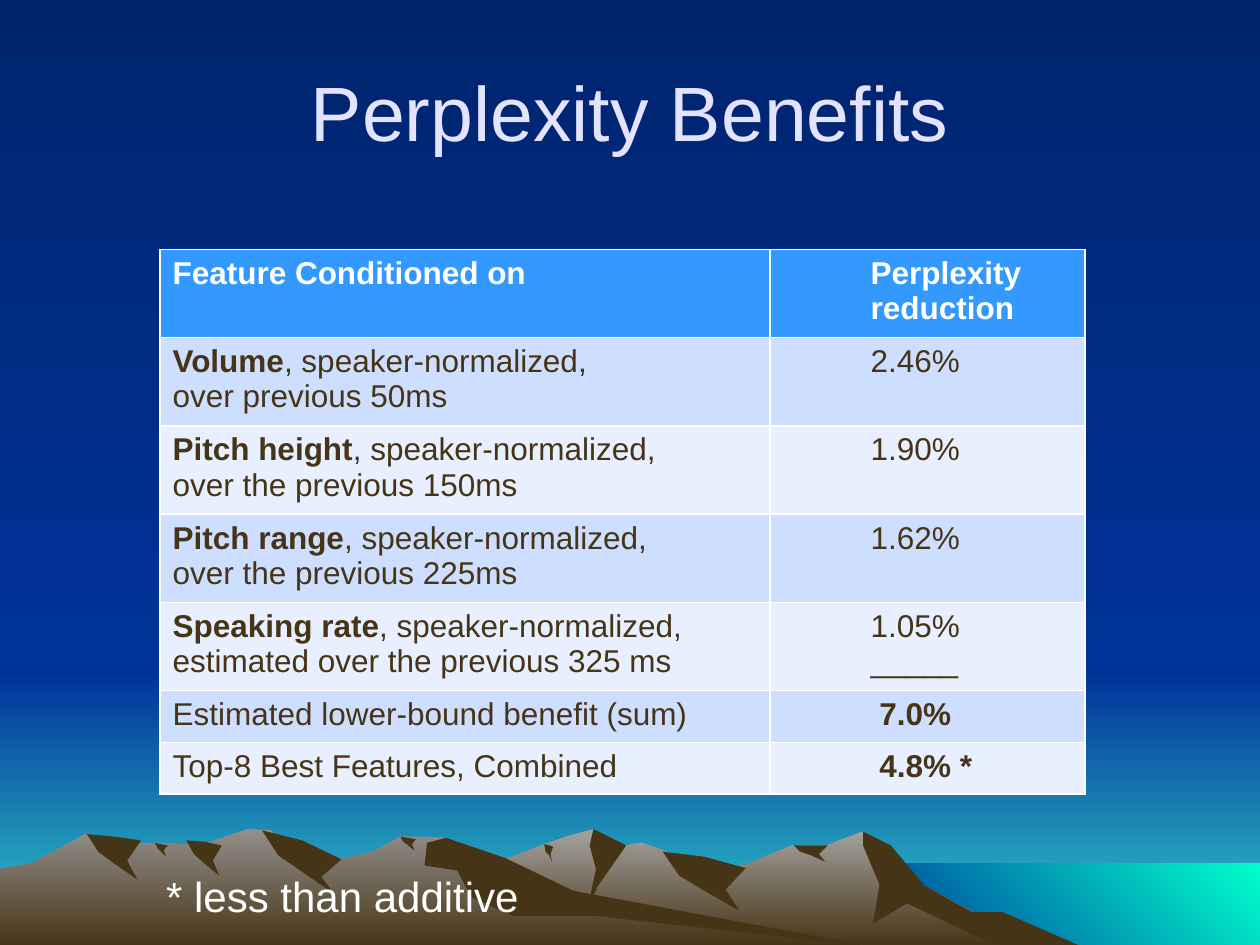
from dataclasses import dataclass

from pptx import Presentation
from pptx import util as u
from pptx.dml.color import RGBColor
from pptx.enum import shapes, text


@dataclass(frozen=True)
class Theme:
    font: str = "Arial"
    title_size: int = 44
    note_size: int = 24
    table_size: int = 18
    title: str = "E3E3FF"
    white: str = "FFFFFF"
    earth: str = "463416"
    header: str = "3399FF"
    bands: tuple = ("CEDEFF", "E8EFFF")
    sky: tuple = ("00246D", "003399")
    horizon: tuple = ("003399", "33CCCC")
    sea: tuple = ("003399", "00FFCC")
    far_hills: tuple = ("A5A29F", "463416")
    near_hills: tuple = ("938F8B", "463416")


@dataclass(frozen=True)
class Gully:
    left: float
    top: float
    width: float
    depth: float
    shoulder: float = 0.15

    def points(self):
        middle = (self.shoulder + 1) / 2
        profile = [(0, 0), (0.5, self.shoulder / 3), (1, self.shoulder),
                   (0.75, middle), (0.92, 1), (0.5, 0.65), (0.2, 0.4)]
        return [(self.left + x * self.width, self.top + y * self.depth)
                for x, y in profile]


SLIDE_WIDTH, SLIDE_HEIGHT = 10, 7.5
HORIZON_TOP = 5.33
SEA_LEFT, SEA_TOP = 6.83, 6.85
HILL_FOOT = 7.51

FAR_CREST = [(3.27, 7.09), (3.94, 6.85), (4.3, 6.71), (4.5, 6.64), (4.71, 6.58),
             (4.86, 6.73), (5.09, 6.69), (5.29, 6.76), (5.36, 6.9), (5.66, 6.97),
             (6.29, 6.71), (6.56, 6.71), (6.85, 6.6), (7.02, 6.71), (7.23, 6.98),
             (7.78, 7.27)]
NEAR_CREST = [(0, 6.9), (0.26, 6.85), (0.68, 6.62), (0.94, 6.71), (1.23, 6.69),
              (1.6, 6.71), (1.96, 6.58), (2.15, 6.59), (2.36, 6.81), (2.71, 6.82),
              (2.96, 6.76), (3.18, 6.64), (3.54, 6.65), (4.32, 7.12)]

EAST_FLANK = [(6.85, 6.6), (7.07, 6.71), (7.34, 7.03), (7.71, 7.24), (7.96, 7.24),
              (8.58, HILL_FOOT), (7.92, HILL_FOOT), (7.2, 7.17), (6.93, 7.33),
              (6.98, 7.02), (6.85, 6.71)]
CENTRAL_FLANK = [(4.71, 6.58), (4.97, 6.71), (4.74, 7.04), (4.65, 7.27),
                 (4.73, 6.9), (4.68, 6.71)]
LONG_FLANK = [(3.39, 6.69), (3.54, 6.65), (4.01, 6.81), (4.55, 7.07),
              (6.9, HILL_FOOT), (4.72, 7.27), (4.07, 7.27), (3.74, 7.12),
              (3.63, 6.91), (3.37, 6.87)]

FAR_GULLIES = [Gully(5.26, 6.76, 0.66, 0.47, shoulder=0.28),
               Gully(6.3, 6.71, 0.27, 0.13, shoulder=0),
               Gully(4.32, 6.7, 0.07, 0.14)]
NEAR_GULLIES = [Gully(2.08, 6.59, 0.63, 0.51, shoulder=0.45),
                Gully(3.18, 6.64, 0.12, 0.11),
                Gully(1.48, 6.67, 0.28, 0.28),
                Gully(1.23, 6.69, 0.1, 0.11),
                Gully(0.69, 6.62, 0.43, 0.36)]

HEADINGS = ("Feature Conditioned on", "Perplexity reduction")
FEATURES = [
    ("Volume", ", speaker-normalized,", "over previous 50ms", ["2.46%"]),
    ("Pitch height", ", speaker-normalized,", "over the previous 150ms", ["1.90%"]),
    ("Pitch range", ", speaker-normalized,", "over the previous 225ms", ["1.62%"]),
    ("Speaking rate", ", speaker-normalized, estimated over the previous 325 ms", "",
     ["1.05%", "_____"]),
]
TOTALS = [("Estimated lower-bound benefit (sum)", "7.0%"),
          ("Top-8 Best Features, Combined", "4.8% *")]
COLUMN_WIDTHS = (4.84, 2.5)
ROW_HEIGHT = 0.41
LABEL_MARGIN, VALUE_MARGIN, TOTAL_MARGIN = 0.1, 0.8, 0.87


def write(paragraph, content, *, font, size, color, bold=False):
    run = paragraph.add_run()
    run.text = content
    run.font.name = font
    run.font.size = u.Pt(size)
    run.font.bold = bold
    run.font.color.rgb = RGBColor.from_string(color)


def paint(fill, color, angle=270):
    if isinstance(color, str):
        fill.solid()
        fill.fore_color.rgb = RGBColor.from_string(color)
        return
    fill.gradient()
    fill.gradient_angle = angle
    for stop, stop_color in zip(fill.gradient_stops, color):
        stop.color.rgb = RGBColor.from_string(stop_color)


class SlideBuilder:
    def __init__(self, slide, theme):
        self.slide = slide
        self.theme = theme

    def finish(self, shape, color, angle=270):
        paint(shape.fill, color, angle)
        shape.line.fill.background()
        shape.shadow.inherit = False

    def rectangle(self, left, top, right, bottom, color, angle=270):
        shape = self.slide.shapes.add_shape(
            shapes.MSO_SHAPE.RECTANGLE,
            *map(u.Inches, (left, top, right - left, bottom - top)))
        self.finish(shape, color, angle)

    def outline(self, points, color):
        start, *others = [(round(x * 100), round(y * 100)) for x, y in points]
        builder = self.slide.shapes.build_freeform(*start, scale=u.Inches(0.01))
        builder.add_line_segments(others, close=True)
        self.finish(builder.convert_to_shape(), color)

    def hills(self, crest, foot_left, foot_right, color, flanks, gullies):
        foot = [(foot_right, HILL_FOOT), (foot_left, HILL_FOOT)]
        self.outline(crest + foot, color)
        for shadow in flanks + [gully.points() for gully in gullies]:
            self.outline(shadow, self.theme.earth)

    def text_box(self, content, left, top, width, height, size, color,
                 align=text.PP_ALIGN.LEFT, anchor=text.MSO_ANCHOR.TOP, wrap=True):
        shape = self.slide.shapes.add_textbox(*map(u.Inches, (left, top, width, height)))
        frame = shape.text_frame
        frame.word_wrap = wrap
        frame.vertical_anchor = anchor
        paragraph = frame.paragraphs[0]
        paragraph.alignment = align
        write(paragraph, content, font=self.theme.font, size=size, color=color)

    def cell(self, cell, paragraphs, margin, fill, color):
        paint(cell.fill, fill)
        cell.margin_left = u.Inches(margin)
        frame = cell.text_frame
        for index, runs in enumerate(paragraphs):
            paragraph = frame.add_paragraph() if index else frame.paragraphs[0]
            for content, bold in runs:
                write(paragraph, content, font=self.theme.font,
                      size=self.theme.table_size, color=color, bold=bold)

    def table(self, rows, left, top, widths, row_height):
        table = self.slide.shapes.add_table(
            len(rows), len(widths), u.Inches(left), u.Inches(top),
            u.Inches(sum(widths)), u.Inches(row_height * len(rows))).table
        for column, width in zip(table.columns, widths):
            column.width = u.Inches(width)
        for index, row in enumerate(rows):
            fill = self.theme.bands[(index - 1) % 2] if index else self.theme.header
            color = self.theme.earth if index else self.theme.white
            for column, (paragraphs, margin) in enumerate(row):
                self.cell(table.cell(index, column), paragraphs, margin, fill, color)


def table_rows():
    rows = [[([[(heading, True)]], margin)
             for heading, margin in zip(HEADINGS, (LABEL_MARGIN, VALUE_MARGIN))]]
    for name, detail, period, values in FEATURES:
        label = [[(name, True), (detail, False)]]
        if period:
            label.append([(period, False)])
        value_lines = [[(value, False)] for value in values]
        rows.append([(label, LABEL_MARGIN), (value_lines, VALUE_MARGIN)])
    for label, value in TOTALS:
        rows.append([([[(label, False)]], LABEL_MARGIN),
                     ([[(value, True)]], TOTAL_MARGIN)])
    return rows


def draw_landscape(builder):
    theme = builder.theme
    builder.rectangle(0, HORIZON_TOP, SLIDE_WIDTH, SLIDE_HEIGHT, theme.horizon)
    builder.rectangle(0, 0, SLIDE_WIDTH, HORIZON_TOP, theme.sky)
    builder.rectangle(SEA_LEFT, SEA_TOP, SLIDE_WIDTH, SLIDE_HEIGHT, theme.sea, angle=45)
    builder.hills(FAR_CREST, 2.58, 8.21, theme.far_hills,
                  [EAST_FLANK, CENTRAL_FLANK], FAR_GULLIES)
    builder.hills(NEAR_CREST, 0, 6.9, theme.near_hills, [LONG_FLANK], NEAR_GULLIES)


def main():
    theme = Theme()
    presentation = Presentation()
    presentation.slide_width = u.Inches(SLIDE_WIDTH)
    presentation.slide_height = u.Inches(SLIDE_HEIGHT)
    slide = presentation.slides.add_slide(presentation.slide_layouts[6])
    paint(slide.background.fill, theme.sky)
    builder = SlideBuilder(slide, theme)
    draw_landscape(builder)
    builder.text_box("Perplexity Benefits", 0.5, 0.25, 9, 1.25, theme.title_size,
                     theme.title, text.PP_ALIGN.CENTER, text.MSO_ANCHOR.MIDDLE)
    builder.table(table_rows(), 1.27, 1.98, COLUMN_WIDTHS, ROW_HEIGHT)
    builder.text_box("* less than additive", 1.22, 6.86, 3.12, 0.5, theme.note_size,
                     theme.white, wrap=False)
    presentation.save("out.pptx")


if __name__ == "__main__":
    main()
